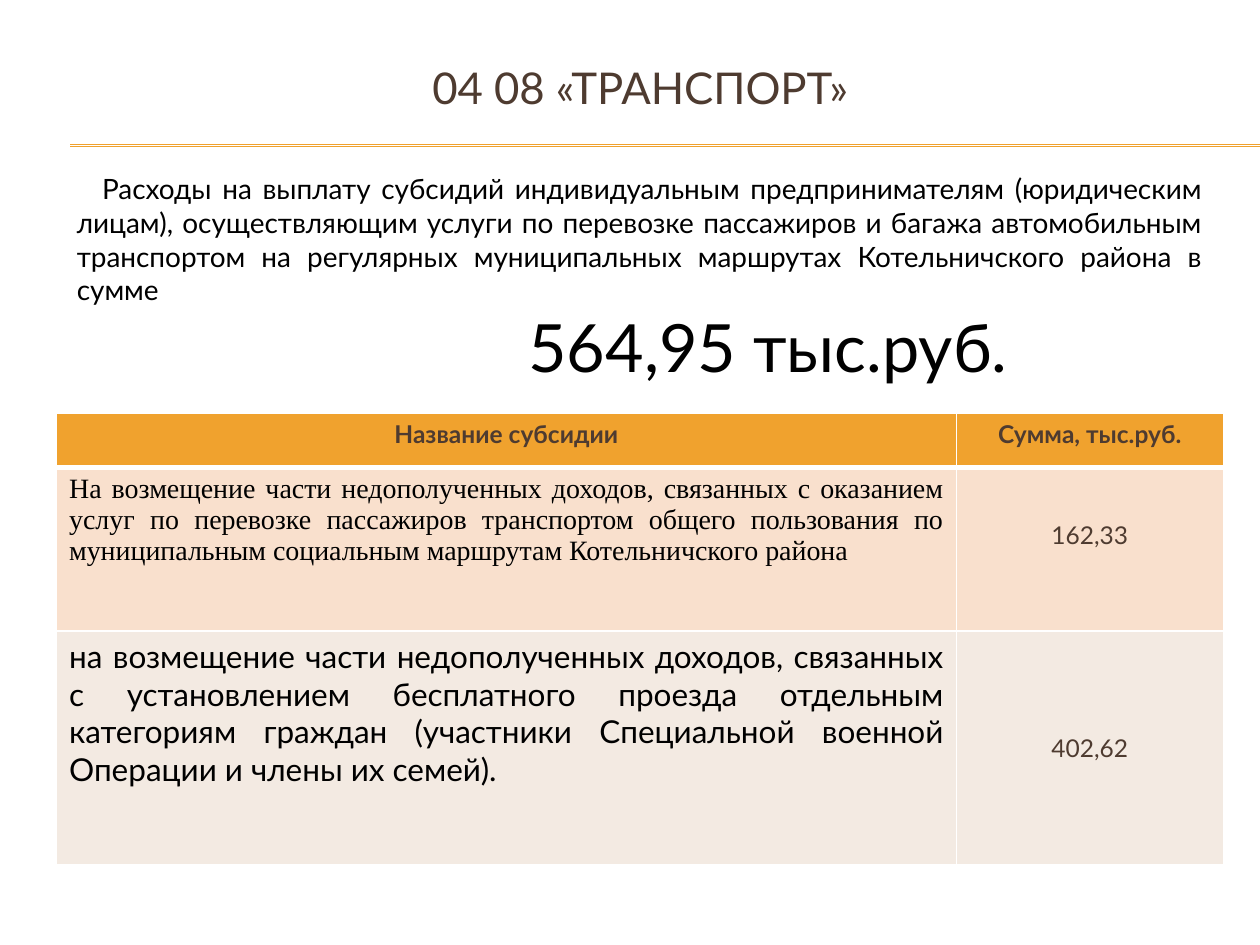
"""Build the transport subsidies slide."""
from lxml.etree import SubElement
from pptx import Presentation
from pptx.dml.color import RGBColor
from pptx.enum.shapes import MSO_CONNECTOR
from pptx.enum.text import MSO_ANCHOR, MSO_AUTO_SIZE, PP_ALIGN
from pptx.oxml import parse_xml
from pptx.oxml.ns import nsdecls, qn
from pptx.util import Cm, Pt

HUES = {"gold": "F0A22E", "brown": "4E3B30", "black": "000000",
        "white": "FFFFFF", "peach": "F9E0CD", "sand": "F3EAE2"}
TITLE = "04 08 «ТРАНСПОРТ»"
INTRO = ("Расходы на выплату субсидий индивидуальным предпринимателям "
         "(юридическим лицам), осуществляющим услуги по перевозке пассажиров "
         "и багажа автомобильным транспортом на регулярных муниципальных "
         "маршрутах Котельничского района в сумме")
TOTAL = "564,95 тыс.руб."
ROWS = [
    ("Название субсидии", "Сумма, тыс.руб."),
    ("На возмещение части недополученных доходов, связанных с оказанием "
     "услуг по перевозке пассажиров транспортом общего пользования по "
     "муниципальным социальным маршрутам Котельничского района", "162,33"),
    ("на возмещение части недополученных доходов, связанных с установлением "
     "бесплатного проезда отдельным категориям граждан (участники "
     "Специальной военной Операции и члены их семей).", "402,62"),
]
HEAD = {"size": 14, "bold": True}
SUM = {"size": 14}
NAME = {"hue": "black", "align": PP_ALIGN.JUSTIFY}
LOOKS = [(HEAD, HEAD),
         ({**NAME, "size": 16, "font": "Times New Roman"}, SUM),
         ({**NAME, "size": 18}, SUM)]
FILLS = ["gold", "peach", "sand"]
WIDTHS = [18.14, 5.38]
HEIGHTS = [1.09, 3.3, 4.72]
RULES = [2.92, 2.95]


def color(hue):
    return RGBColor.from_string(HUES[hue])


def write(para, text, size, hue="brown", font="Lato", bold=False,
          align=PP_ALIGN.CENTER, left=0, first=0):
    para.alignment = align
    props = para._p.get_or_add_pPr()
    props.set("marL", str(Cm(left)))
    props.set("indent", str(Cm(first)))
    run = para.add_run()
    run.text = text
    run.font.size, run.font.name, run.font.bold = Pt(size), font, bold
    run.font.color.rgb = color(hue)


def edge(cell, row):
    props = cell._tc.get_or_add_tcPr()
    widths = {"L": 1, "R": 1, "T": 3 if row == 1 else 1,
              "B": 3 if row == 0 else 1}
    for spot, (side, width) in enumerate(widths.items()):
        props.insert(spot, parse_xml(
            f'<a:ln{side} {nsdecls("a")} w="{Pt(width)}"><a:solidFill>'
            f'<a:srgbClr val="{HUES["white"]}"/></a:solidFill></a:ln{side}>'))


def main():
    deck = Presentation()
    deck.slide_width, deck.slide_height = Cm(25.4), Cm(19.05)
    slide = deck.slides.add_slide(deck.slide_layouts[5])

    for y in RULES:
        rule = slide.shapes.add_connector(
            MSO_CONNECTOR.STRAIGHT, Cm(1.42), Cm(y), Cm(25.4), Cm(y))
        rule.line.color.rgb, rule.line.width = color("gold"), Pt(0.75)
        SubElement(rule._element.spPr, qn("a:effectLst"))

    title = slide.shapes.title
    title.left, title.top = Cm(0.84), Cm(0.58)
    title.width, title.height = Cm(24.13), Cm(2.34)
    frame = title.text_frame
    frame.auto_size = MSO_AUTO_SIZE.NONE
    frame.vertical_anchor = MSO_ANCHOR.MIDDLE
    write(frame.paragraphs[0], TITLE, size=25)

    intro = slide.shapes.add_textbox(Cm(1.3), Cm(3.53), Cm(23.19), Cm(4.19))
    frame = intro.text_frame
    frame.word_wrap = True
    frame.vertical_anchor = MSO_ANCHOR.MIDDLE
    write(frame.paragraphs[0], INTRO, size=16, first=0.51, **NAME)
    write(frame.add_paragraph(), TOTAL, size=38, left=9.1, **NAME)

    table = slide.shapes.add_table(
        len(ROWS), len(WIDTHS), Cm(1.14), Cm(8.33),
        Cm(sum(WIDTHS)), Cm(sum(HEIGHTS))).table
    for col, width in zip(table.columns, WIDTHS):
        col.width = Cm(width)
    for r, (texts, looks) in enumerate(zip(ROWS, LOOKS)):
        table.rows[r].height = Cm(HEIGHTS[r])
        for c, (text, look) in enumerate(zip(texts, looks)):
            cell = table.cell(r, c)
            cell.fill.solid()
            cell.fill.fore_color.rgb = color(FILLS[r])
            if look is SUM:
                cell.vertical_anchor = MSO_ANCHOR.MIDDLE
            edge(cell, r)
            write(cell.text_frame.paragraphs[0], text, **look)
    table.cell(1, 1).margin_bottom = Cm(0.69)

    deck.save("out.pptx")


if __name__ == "__main__":
    main()
